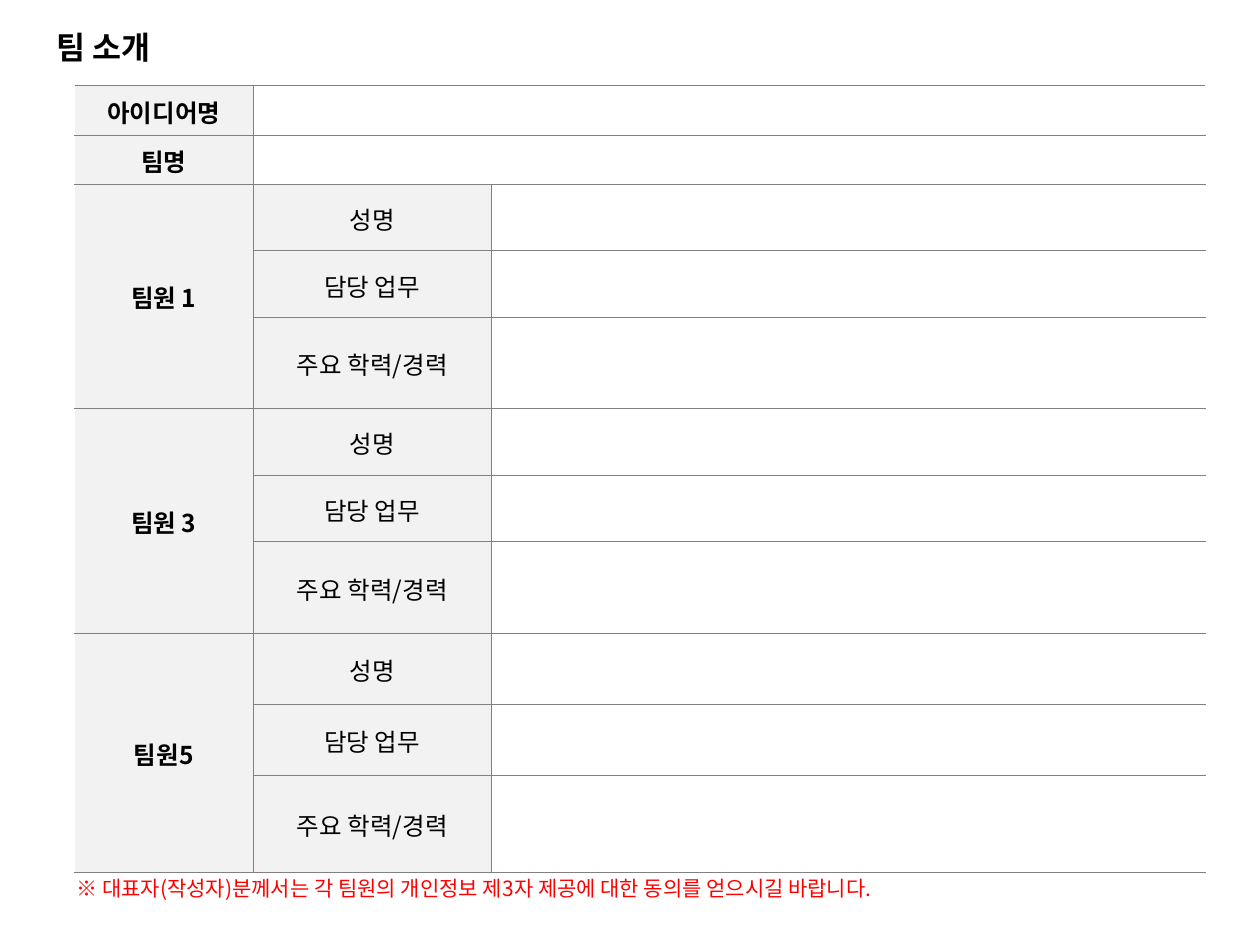
from lxml.etree import SubElement
from pptx import Presentation
from pptx.dml.color import RGBColor
from pptx.enum.text import MSO_ANCHOR, PP_ALIGN
from pptx.oxml import parse_xml
from pptx.oxml.ns import nsdecls, qn
from pptx.util import Inches, Pt

FONT = "Noto Sans CJK KR"
BLACK = RGBColor(0x00, 0x00, 0x00)
RED = RGBColor(0xFF, 0x00, 0x00)
GRAY = RGBColor(0x80, 0x80, 0x80)
PALE = RGBColor(0xF2, 0xF2, 0xF2)
WHITE = RGBColor(0xFF, 0xFF, 0xFF)

COLS = [1.42, 1.89, 5.67]
HEADS = ["아이디어명", "팀명"]
HEAD_H = 0.39
FIELDS = ["성명", "담당 업무", "주요 학력/경력"]
TEAM = [
    ("팀원 1", [0.53, 0.53, 0.72]),
    ("팀원 3", [0.53, 0.53, 0.73]),
    ("팀원5", [0.56, 0.56, 0.77]),
]


def write(frame, text, size=14, bold=False, color=BLACK, align=PP_ALIGN.LEFT):
    para = frame.paragraphs[0]
    para.alignment = align
    run = para.add_run()
    run.text = text
    font = run.font
    font.size, font.bold, font.name = Pt(size), bold, FONT
    font.color.rgb = color
    SubElement(run._r.get_or_add_rPr(), qn("a:ea")).set("typeface", FONT)


def edge(cell, sides):
    props = cell._tc.get_or_add_tcPr()
    for index, side in enumerate(sides):
        props.insert(index, parse_xml(
            f'<a:ln{side} {nsdecls("a")} w="{Pt(0.25)}"><a:solidFill>'
            f'<a:srgbClr val="{GRAY}"/></a:solidFill></a:ln{side}>'))


def style(cell, row, col):
    cell.margin_left = cell.margin_right = cell.margin_top = Inches(0.02)
    cell.margin_bottom = 0
    cell.vertical_anchor = MSO_ANCHOR.MIDDLE
    label = col == 0 or (col == 1 and row >= len(HEADS))
    cell.fill.solid()
    cell.fill.fore_color.rgb = PALE if label else WHITE
    edge(cell, ("L" if col else "") + ("R" if label else "") + "TB")


def add_title(slide, left, top, width, height):
    title = slide.shapes.title
    title.left, title.top = Inches(left), Inches(top)
    title.width, title.height = Inches(width), Inches(height)
    title.text_frame.vertical_anchor = MSO_ANCHOR.TOP
    write(title.text_frame, "팀 소개", size=18, bold=True)


def add_form(slide, left, top, width, height):
    rows = [HEAD_H] * len(HEADS) + [h for _, part in TEAM for h in part]
    table = slide.shapes.add_table(
        len(rows), len(COLS), Inches(left), Inches(top),
        Inches(width), Inches(height)).table
    table.first_row = table.horz_banding = False
    for col, size in zip(table.columns, COLS):
        col.width = Inches(size)
    for row, size in zip(table.rows, rows):
        row.height = Inches(size)
    for row in range(len(rows)):
        for col in range(len(COLS)):
            style(table.cell(row, col), row, col)

    def put(row, col, text, bold):
        write(table.cell(row, col).text_frame, text, bold=bold,
              align=PP_ALIGN.CENTER)

    for row, head in enumerate(HEADS):
        table.cell(row, 1).merge(table.cell(row, 2))
        put(row, 0, head, True)
    for index, (name, _) in enumerate(TEAM):
        first = len(HEADS) + index * len(FIELDS)
        last = first + len(FIELDS) - 1
        table.cell(first, 0).merge(table.cell(last, 0))
        put(first, 0, name, True)
        for row, field in enumerate(FIELDS, first):
            put(row, 1, field, False)


def add_note(slide, left, top, width, height):
    box = slide.shapes.add_textbox(
        Inches(left), Inches(top), Inches(width), Inches(height))
    box.text_frame.word_wrap = True
    write(box.text_frame,
          "※ 대표자(작성자)분께서는 각 팀원의 개인정보 제3자 제공에 대한 동의를 얻으시길 바랍니다.",
          size=12, color=RED)


def main():
    deck = Presentation()
    deck.slide_width, deck.slide_height = Inches(10), Inches(7.5)
    slide = deck.slides.add_slide(deck.slide_layouts[5])
    add_title(slide, 0.35, 0.17, 8.66, 0.4)
    add_form(slide, 0.59, 0.68, 8.98, 6.22)
    add_note(slide, 0.51, 6.9, 8.07, 0.3)
    deck.save("out.pptx")


if __name__ == "__main__":
    main()
